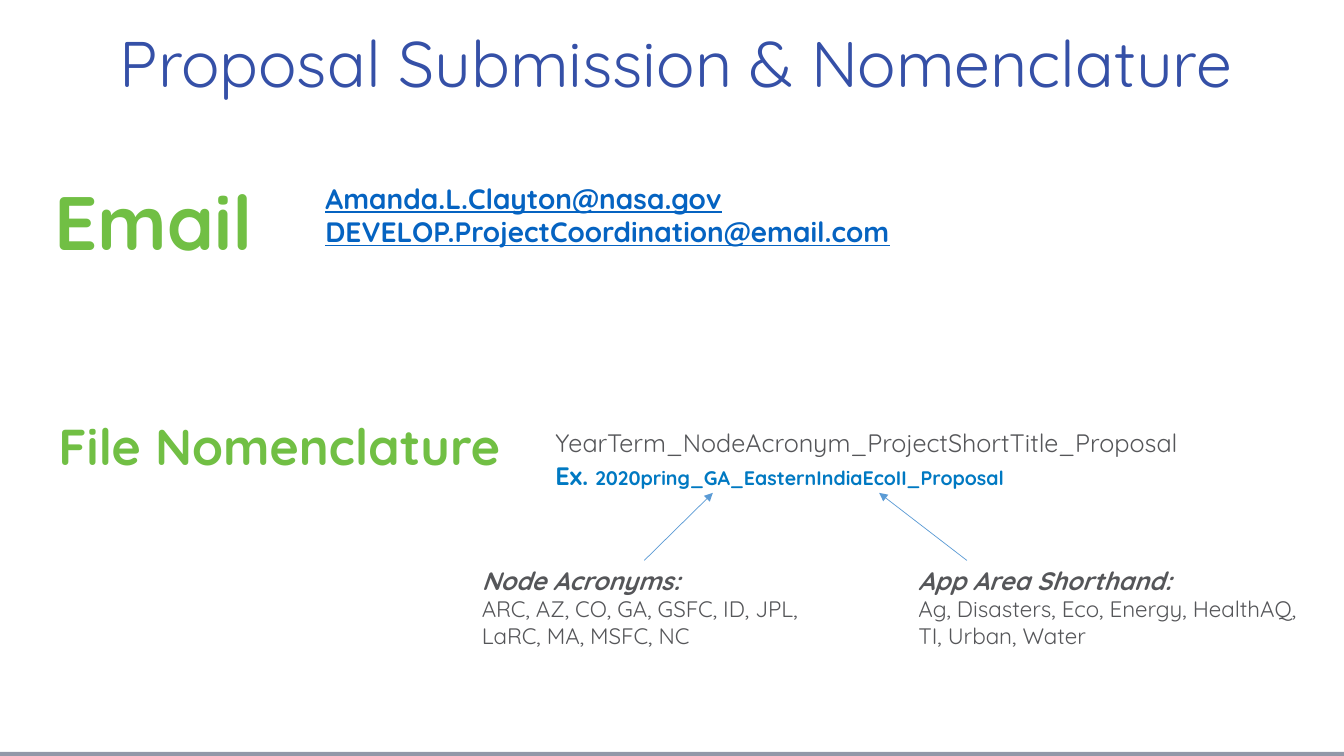
from dataclasses import dataclass

from lxml import etree
from pptx import Presentation
from pptx.dml.color import RGBColor
from pptx.enum.shapes import MSO_CONNECTOR, MSO_SHAPE
from pptx.enum.text import MSO_ANCHOR, PP_ALIGN
from pptx.oxml.ns import qn
from pptx.util import Inches, Pt


@dataclass(frozen=True)
class Theme:
    font: str = "Quicksand"
    title: str = "3550A7"
    heading: str = "71BF44"
    link: str = "0563C1"
    body: str = "555659"
    example: str = "0079C2"
    arrow: str = "5B9BD5"
    footer: str = "9298A8"
    title_size: int = 46
    email_size: int = 54
    file_size: int = 36
    link_size: int = 20
    label_size: int = 18
    list_size: int = 16
    example_size: int = 14


THEME = Theme()


def add_text(slide, place, paragraphs, align=PP_ALIGN.LEFT, spacing=1.0,
             anchor=MSO_ANCHOR.TOP, wrap=True):
    """Each paragraph is a list of (text, size, colour, font format) runs."""
    box = slide.shapes.add_textbox(*map(Inches, place))
    frame = box.text_frame
    frame.word_wrap = wrap
    frame.vertical_anchor = anchor
    for index, spans in enumerate(paragraphs):
        para = frame.add_paragraph() if index else frame.paragraphs[0]
        para.alignment = align
        para.line_spacing = spacing
        for text, size, colour, extra in spans:
            span = para.add_run()
            span.text = text
            span.font.color.rgb = RGBColor.from_string(colour)
            values = {"name": THEME.font, "size": Pt(size), **extra}
            for name, value in values.items():
                setattr(span.font, name, value)


def add_heading(slide, place, text, size):
    add_text(slide, place, [[(text, size, THEME.heading, {"bold": True})]],
             align=PP_ALIGN.CENTER, wrap=False)


def add_legend(slide, left, width, label, items):
    label_format = {"bold": True, "italic": True}
    add_text(slide, (left, 5.56, width, 0.94), [
        [(label, THEME.label_size, THEME.body, label_format)],
        [(items, THEME.list_size, THEME.body, {})],
    ])


def add_arrow(slide, start_x, end_x, start_y=5.56, end_y=4.89):
    ends = map(Inches, (start_x, start_y, end_x, end_y))
    arrow = slide.shapes.add_connector(MSO_CONNECTOR.STRAIGHT, *ends)
    arrow.line.color.rgb = RGBColor.from_string(THEME.arrow)
    arrow.line.width = Pt(0.5)
    etree.SubElement(arrow.line._get_or_add_ln(), qn("a:tailEnd"), type="triangle")
    etree.SubElement(arrow._element.spPr, qn("a:effectLst"))


def add_footer_bar(slide):
    place = map(Inches, (0, 7.46, 13.33, 0.04))
    bar = slide.shapes.add_shape(MSO_SHAPE.RECTANGLE, *place)
    bar.shadow.inherit = False
    bar.fill.solid()
    bar.fill.fore_color.rgb = RGBColor.from_string(THEME.footer)
    bar.line.fill.background()


def main():
    deck = Presentation()
    deck.slide_width, deck.slide_height = Inches(13.33), Inches(7.5)
    slide = deck.slides.add_slide(deck.slide_layouts[6])

    # Title and footer
    add_footer_bar(slide)
    add_text(slide, (1.09, 0.4, 12.08, 0.52),
             [[("Proposal Submission & Nomenclature", THEME.title_size, THEME.title, {})]],
             spacing=0.9, anchor=MSO_ANCHOR.MIDDLE)

    # Email addresses
    add_heading(slide, (0.44, 1.69, 2.17, 1.01), "Email", THEME.email_size)
    addresses = ("Amanda.L.Clayton@nasa.gov", "DEVELOP.ProjectCoordination@email.com")
    link_format = {"bold": True, "underline": True}
    add_text(slide, (3.13, 1.75, 5.94, 0.77),
             [[(address, THEME.link_size, THEME.link, link_format)] for address in addresses])

    # File name pattern and example
    add_heading(slide, (0.44, 4.07, 4.66, 0.71), "File Nomenclature", THEME.file_size)
    bold = {"bold": True}
    add_text(slide, (5.41, 4.16, 7.62, 0.77), [
        [("YearTerm_NodeAcronym_ProjectShortTitle_Proposal",
          THEME.label_size, THEME.body, {})],
        [("Ex. ", THEME.label_size, THEME.example, bold),
         ("2020pring_GA_EasternIndiaEcoII_Proposal",
          THEME.example_size, THEME.example, bold)],
    ], spacing=1.1)

    # Legends pointing at parts of the example
    add_legend(slide, 4.68, 3.82, "Node Acronyms:",
               "ARC, AZ, CO, GA, GSFC, ID, JPL, LaRC, MA, MSFC, NC")
    add_legend(slide, 9.01, 4.22, "App Area Shorthand:",
               "Ag, Disasters, Eco, Energy, HealthAQ, TI, Urban, Water")
    add_arrow(slide, 6.39, 7.07)
    add_arrow(slide, 9.59, 8.72)

    deck.save("out.pptx")


if __name__ == "__main__":
    main()
